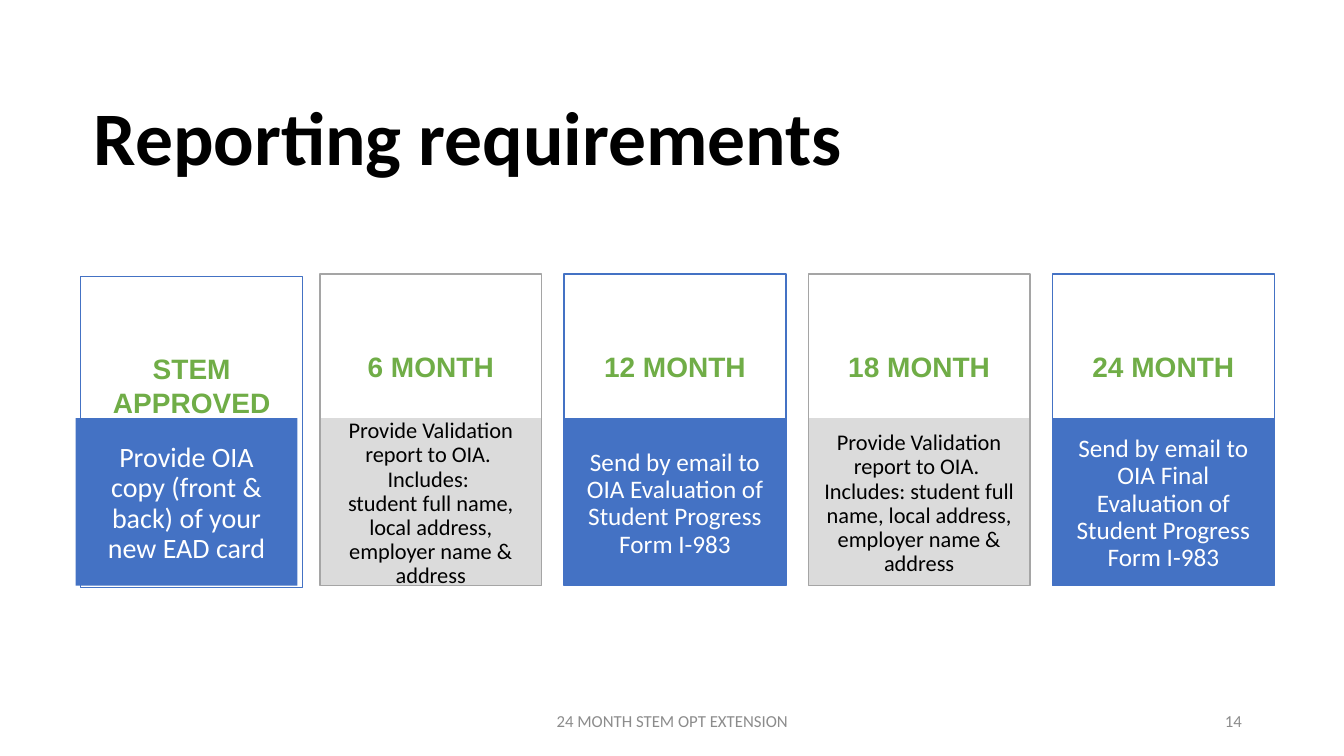
from dataclasses import dataclass
from typing import NamedTuple

from pptx import Presentation
from pptx import util as u
from pptx.dml.color import RGBColor
from pptx.enum import shapes, text


class Style(NamedTuple):
    size: int
    color: str
    font: str = "Calibri"
    bold: bool = False
    spacing: float = 1.0


class Area(NamedTuple):
    """A rectangle in percent of the slide's width and height."""
    left: float
    top: float
    width: float
    height: float


@dataclass(frozen=True)
class Theme:
    blue: str = "4472C4"
    light_gray: str = "DBDBDB"
    gray: str = "A5A5A5"
    title: Style = Style(54, "000000", bold=True)
    heading: Style = Style(20, "70AD47", "Arial", bold=True)
    footer: Style = Style(12, "8C8C8C")
    intro: Style = Style(20, "FFFFFF", spacing=0.9)
    form: Style = Style(18, "FFFFFF", spacing=0.9)
    report: Style = Style(16, "000000", spacing=0.9)


@dataclass(frozen=True)
class Milestone:
    heading: str
    duty: str
    style: Style
    fill: str
    line: str
    shift: tuple[float, float] = (0, 0)


THEME = Theme()
WIDTH, HEIGHT = u.Inches(13.33), u.Inches(7.5)
FIRST_COLUMN, COLUMN_STEP, COLUMN_WIDTH = 5.63, 18.17, 16.5
CARD_TOP, CARD_HEIGHT = 36.27, 41.2
PANEL_TOP, PANEL_HEIGHT = 55.33, 22.13
DUTY_INDENT, DUTY_TOP, DUTY_HEIGHT = 0.38, 56.67, 20

LEFT, CENTER, RIGHT = text.PP_ALIGN.LEFT, text.PP_ALIGN.CENTER, text.PP_ALIGN.RIGHT

MILESTONES = (
    Milestone("STEM APPROVED", "Provide OIA copy (front & back) of your new EAD card",
              THEME.intro, THEME.blue, THEME.blue, shift=(0.38, 0.27)),
    Milestone("6 MONTH", "Provide Validation report to OIA.  Includes: \n"
              "student full name, local address, employer name & address",
              THEME.report, THEME.light_gray, THEME.gray),
    Milestone("12 MONTH", "Send by email to OIA Evaluation of Student Progress\nForm I-983",
              THEME.form, THEME.blue, THEME.blue),
    Milestone("18 MONTH", "Provide Validation report to OIA.  Includes: student full name, "
              "local address, employer name & address",
              THEME.report, THEME.light_gray, THEME.gray),
    Milestone("24 MONTH", "Send by email to OIA Final Evaluation of Student Progress\nForm I-983",
              THEME.form, THEME.blue, THEME.blue),
)


def place(area: Area) -> tuple[int, int, int, int]:
    """Turn percentages into slide lengths."""
    return (int(WIDTH * area.left / 100), int(HEIGHT * area.top / 100),
            int(WIDTH * area.width / 100), int(HEIGHT * area.height / 100))


def write(shape, words: str, style: Style, align, anchor=text.MSO_ANCHOR.MIDDLE) -> None:
    frame = shape.text_frame
    frame.word_wrap = True
    frame.vertical_anchor = anchor
    frame.text = words
    for para in frame.paragraphs:
        para.alignment = align
        para.line_spacing = style.spacing
        for span in para.runs:
            span.font.name = style.font
            span.font.size = u.Pt(style.size)
            span.font.bold = style.bold
            span.font.color.rgb = RGBColor.from_string(style.color)


def add_text(page, area: Area, words: str, style: Style, align) -> None:
    write(page.shapes.add_textbox(*place(area)), words, style, align)


def add_rectangle(page, area: Area, fill: str = "", line: str = ""):
    """Draw a rectangle; an empty colour means no fill or no line."""
    box = page.shapes.add_shape(shapes.MSO_SHAPE.RECTANGLE, *place(area))
    box.shadow.inherit = False
    if fill:
        box.fill.solid()
        box.fill.fore_color.rgb = RGBColor.from_string(fill)
    else:
        box.fill.background()
    if line:
        box.line.color.rgb = RGBColor.from_string(line)
        box.line.width = u.Pt(1)
    else:
        box.line.fill.background()
    return box


def add_milestone(page, column: int, item: Milestone) -> None:
    left = FIRST_COLUMN + column * COLUMN_STEP
    right_shift, down_shift = item.shift
    add_rectangle(page, Area(left, PANEL_TOP, COLUMN_WIDTH, PANEL_HEIGHT), fill=item.fill)
    card = add_rectangle(page, Area(left + right_shift, CARD_TOP + down_shift,
                                    COLUMN_WIDTH, CARD_HEIGHT), line=item.line)
    card.text_frame.margin_top = HEIGHT // 10
    write(card, item.heading, THEME.heading, CENTER, text.MSO_ANCHOR.TOP)
    add_text(page, Area(left + DUTY_INDENT, DUTY_TOP, COLUMN_WIDTH - 2 * DUTY_INDENT, DUTY_HEIGHT),
             item.duty, item.style, CENTER)


def main() -> None:
    deck = Presentation()
    deck.slide_width, deck.slide_height = WIDTH, HEIGHT
    page = deck.slides.add_slide(deck.slide_layouts[6])
    add_text(page, Area(6.23, 12.27, 87.53, 11.2), "Reporting requirements", THEME.title, LEFT)
    for column, item in enumerate(MILESTONES):
        add_milestone(page, column, item)
    add_text(page, Area(33.15, 92.67, 33.75, 5.33), "24 MONTH STEM OPT EXTENSION",
             THEME.footer, CENTER)
    add_text(page, Area(70.65, 92.67, 22.5, 5.33), "14", THEME.footer, RIGHT)
    deck.save("out.pptx")


if __name__ == "__main__":
    main()
